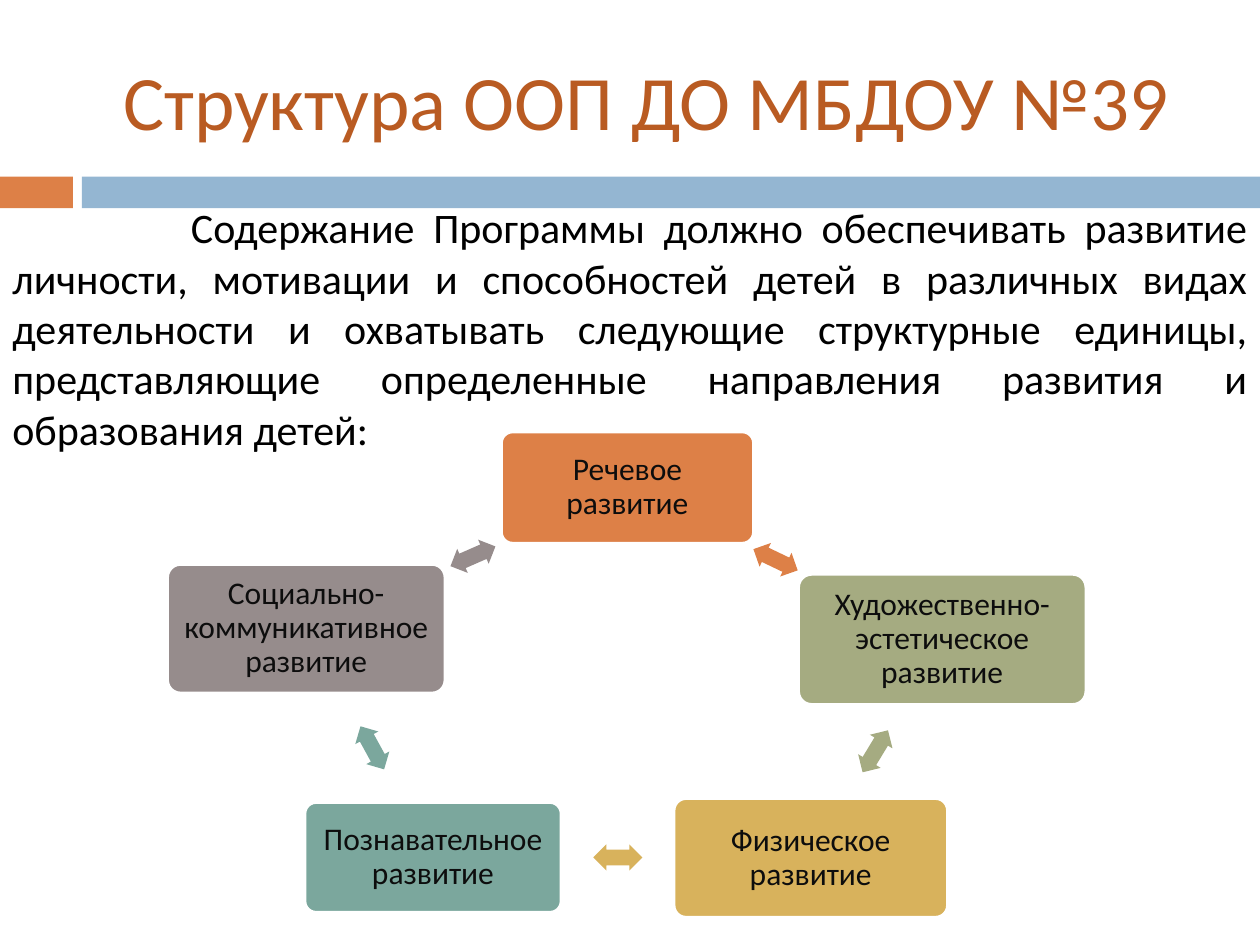
from dataclasses import dataclass

from pptx import Presentation
from pptx.dml.color import RGBColor
from pptx.enum.shapes import MSO_SHAPE
from pptx.enum.text import MSO_ANCHOR, PP_ALIGN
from pptx.util import Cm, Pt


@dataclass(frozen=True)
class Theme:
    font: str = "Calibri"
    title_size: int = 44
    body_size: int = 24
    label_size: int = 18
    title: str = "B95B22"
    body: str = "000000"
    label: str = "0D0D0D"
    white: str = "FFFFFF"
    orange: str = "DD8047"
    blue: str = "94B6D2"
    green: str = "A5AB81"
    gold: str = "D8B25C"
    teal: str = "7BA79D"
    gray: str = "968C8C"


theme = Theme()
presentation = Presentation()
presentation.slide_width, presentation.slide_height = Cm(25.4), Cm(19.05)
slide = presentation.slides.add_slide(presentation.slide_layouts[6])


def add_filled_shape(kind, box, color):
    shape = slide.shapes.add_shape(kind, *map(Cm, box))
    shape.shadow.inherit = False
    shape.fill.solid()
    shape.fill.fore_color.rgb = RGBColor.from_string(color)
    shape.line.fill.background()
    return shape


def write_text(shape, text, size, color, frame_format, paragraph_format):
    frame = shape.text_frame
    frame.text = text
    paragraph = frame.paragraphs[0]
    font_format = {"name": theme.font, "size": Pt(size)}
    for target, values in (
        (frame, {"word_wrap": True, **frame_format}),
        (paragraph, paragraph_format),
        (paragraph.runs[0].font, font_format),
    ):
        for name, value in values.items():
            setattr(target, name, value)
    paragraph.runs[0].font.color.rgb = RGBColor.from_string(color)
    return paragraph


# Band under the title
for left, width, color in ((0, 1.47, theme.orange), (1.65, 23.75, theme.blue)):
    add_filled_shape(MSO_SHAPE.RECTANGLE, (left, 3.56, width, 0.64), color)

# Title
title = slide.shapes.add_textbox(Cm(1.7), Cm(0.64), Cm(22.66), Cm(2.74))
write_text(title, "Структура ООП ДО МБДОУ №39", theme.title_size, theme.title,
           {"vertical_anchor": MSO_ANCHOR.MIDDLE}, {"alignment": PP_ALIGN.CENTER})

# Introduction with an indented first line
introduction = slide.shapes.add_textbox(Cm(0), Cm(3.94), Cm(25.4), Cm(8.69))
paragraph = write_text(
    introduction,
    "Содержание Программы должно обеспечивать развитие личности, мотивации и "
    "способностей детей в различных видах деятельности и охватывать следующие "
    "структурные единицы, представляющие определенные направления развития и "
    "образования детей:",
    theme.body_size, theme.body,
    {"vertical_anchor": MSO_ANCHOR.TOP}, {"alignment": PP_ALIGN.JUSTIFY})
paragraph._p.get_or_add_pPr().set("indent", str(Cm(3.6)))

# Cycle: label, colour, box, then position and rotation of the arrow that follows
cycle = (
    ("Речевое развитие", theme.orange,
     (10.11, 8.71, 5.08, 2.24), (15.14, 11.02), 25.6),
    ("Художественно-эстетическое развитие", theme.green,
     (16.1, 11.58, 5.79, 2.62), (17.15, 14.88), 121.2),
    ("Физическое развитие", theme.gold,
     (13.59, 16.1, 5.51, 2.39), (11.96, 17.02), 180),
    ("Познавательное развитие", theme.teal,
     (6.15, 16.18, 5.16, 2.21), (7.01, 14.81), 241.2),
    ("Социально-коммуникативное развитие", theme.gray,
     (3.38, 11.38, 5.59, 2.59), (9.04, 10.95), 336.3),
)
margins = {f"margin_{side}": Cm(0.1) for side in ("left", "top", "right", "bottom")}
label_frame = {"vertical_anchor": MSO_ANCHOR.MIDDLE, **margins}
label_paragraph = {"alignment": PP_ALIGN.CENTER, "line_spacing": 0.9}

for label, color, box, arrow_position, rotation in cycle:
    area = add_filled_shape(MSO_SHAPE.ROUNDED_RECTANGLE, box, color)
    area.adjustments[0] = 0.1
    area.line.color.rgb = RGBColor.from_string(theme.white)
    area.line.width = Pt(1.5)
    write_text(area, label, theme.label_size, theme.label, label_frame, label_paragraph)

    arrow = add_filled_shape(
        MSO_SHAPE.LEFT_RIGHT_ARROW, (*arrow_position, 0.99, 0.53), color)
    arrow.adjustments[0] = 0.6
    arrow.adjustments[1] = 0.5
    arrow.rotation = rotation

presentation.save("out.pptx")
